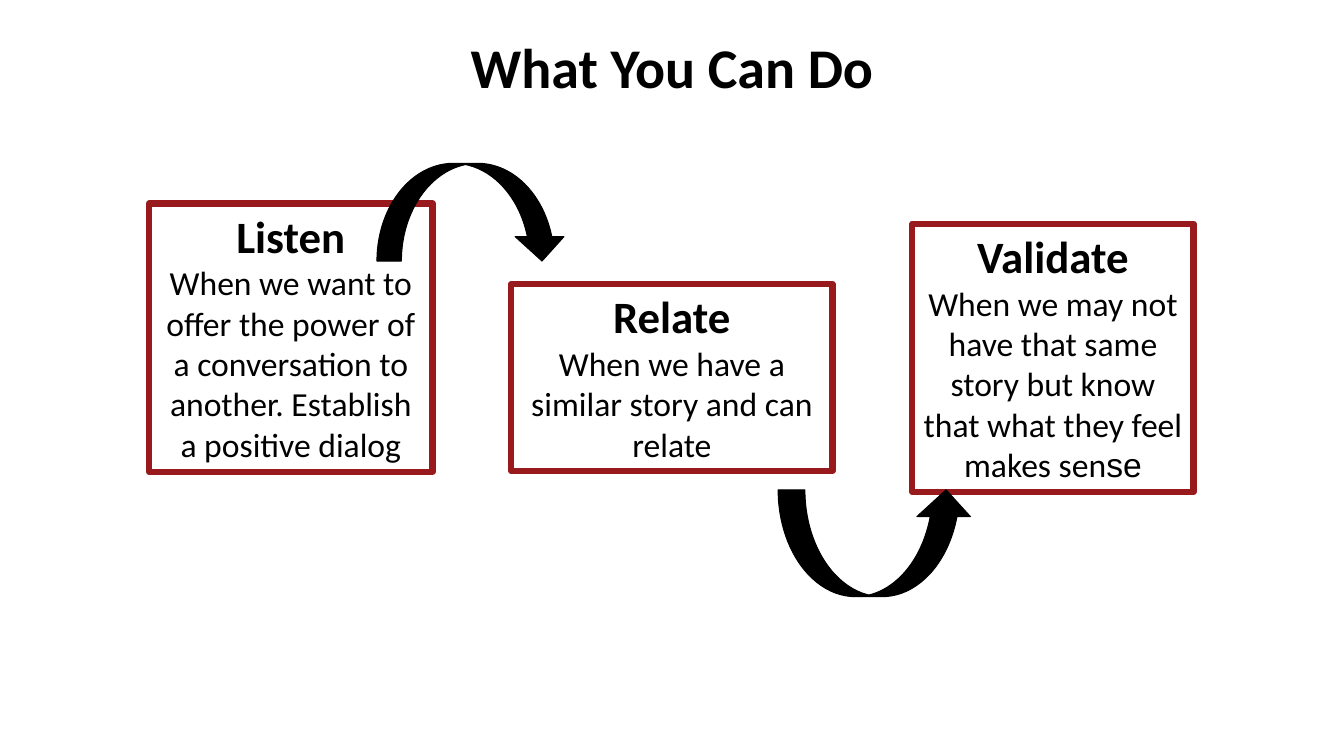
from dataclasses import dataclass

from pptx import Presentation
from pptx import util as u
from pptx.dml.color import RGBColor
from pptx.enum import shapes, text


@dataclass(frozen=True)
class Theme:
    ink: RGBColor = RGBColor(0x00, 0x00, 0x00)
    border: RGBColor = RGBColor(0x99, 0x1A, 0x1D)
    font: str = "Calibri"
    alt_font: str = "Arial"
    title_size: int = 40
    heading_size: int = 32
    body_size: int = 24
    border_width: float = 4.5
    arrow_width: float = 0.75


THEME = Theme()
SLIDE_W, SLIDE_H = u.Inches(13.33), u.Inches(7.5)


def place(left, top, width, height):
    """Turn percentages of the slide's size into lengths."""
    return (int(SLIDE_W * left / 100), int(SLIDE_H * top / 100),
            int(SLIDE_W * width / 100), int(SLIDE_H * height / 100))


def add_run(p, words, size=THEME.body_size, bold=False, font=THEME.font):
    r = p.add_run()
    r.text = words
    r.font.name = font
    r.font.size = u.Pt(size)
    r.font.bold = bold
    r.font.color.rgb = THEME.ink
    p.alignment = text.PP_ALIGN.CENTER


def add_title(slide, words, area):
    sp = slide.shapes.title
    sp.left, sp.top, sp.width, sp.height = place(*area)
    tf = sp.text_frame
    tf.vertical_anchor = text.MSO_ANCHOR.TOP
    tf.auto_size = text.MSO_AUTO_SIZE.NONE
    p = tf.paragraphs[0]
    p.line_spacing = 1.0
    add_run(p, words, size=THEME.title_size, bold=True)


def add_step(slide, heading, body, area, ending=""):
    """Add a bordered box; ending is the tail of the body in the second font."""
    sp = slide.shapes.add_shape(shapes.MSO_SHAPE.RECTANGLE, *place(*area))
    sp.shadow.inherit = False
    sp.fill.background()
    sp.line.color.rgb = THEME.border
    sp.line.width = u.Pt(THEME.border_width)
    tf = sp.text_frame
    tf.word_wrap = True
    tf.auto_size = text.MSO_AUTO_SIZE.SHAPE_TO_FIT_TEXT
    tf.vertical_anchor = text.MSO_ANCHOR.TOP
    add_run(tf.paragraphs[0], heading, size=THEME.heading_size, bold=True)
    p = tf.add_paragraph()
    add_run(p, body)
    if ending:
        add_run(p, ending, font=THEME.alt_font)


def add_arrow(slide, kind, area):
    sp = slide.shapes.add_shape(kind, *place(*area))
    sp.shadow.inherit = False
    sp.fill.solid()
    sp.fill.fore_color.rgb = THEME.ink
    sp.line.color.rgb = THEME.ink
    sp.line.width = u.Pt(THEME.arrow_width)


def main():
    prs = Presentation()
    prs.slide_width, prs.slide_height = SLIDE_W, SLIDE_H
    slide = prs.slides.add_slide(prs.slide_layouts.get_by_name("Title Only"))

    add_title(slide, "What You Can Do", (0, 3.6, 100, 9.47))
    add_step(slide, "Listen",
             "When we want to offer the power of a conversation to another. "
             "Establish a positive dialog", (11.1, 26.93, 21.08, 35.47))
    add_step(slide, "Relate", "When we have a similar story and can relate",
             (38.03, 37.6, 23.93, 24.67))
    add_step(slide, "Validate",
             "When we may not have that same story but know that what they "
             "feel makes sen", (67.88, 29.6, 20.93, 35.47), ending="se")
    add_arrow(slide, shapes.MSO_SHAPE.CURVED_DOWN_ARROW,
              (28.05, 21.6, 14.1, 12.93))
    add_arrow(slide, shapes.MSO_SHAPE.CURVED_UP_ARROW,
              (57.9, 64.8, 14.48, 14.13))

    prs.save("out.pptx")


if __name__ == "__main__":
    main()
